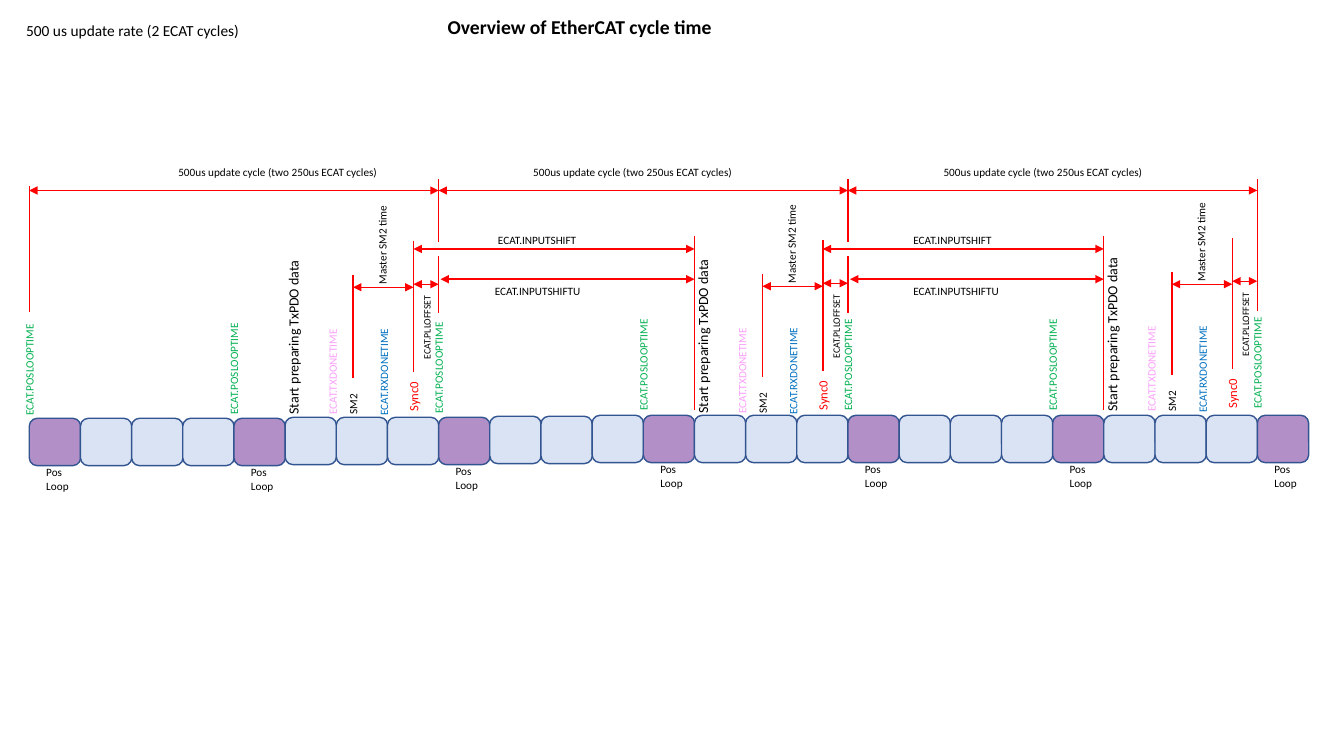
from lxml import etree
from pptx import Presentation
from pptx import util as u
from pptx.dml import color
from pptx.enum import shapes, text
from pptx.oxml import ns

# Timeline grid: 24 columns from the first position loop to the last
LEFT, PITCH = 0.29, (12.47 - 0.29) / 24
CELLS_PER_CYCLE, CELLS_PER_LOOP = 8, 4
CELL_W, CELL_H = 0.51, 0.47
CELL_TOPS = [4.15] * 5 + [4.14] * 4 + [4.13] * 2 + [4.12] * 14
LOOP_LABEL_BOTTOMS = [4.22, 4.21, 4.2, 4.17, 4.17, 4.17, 4.15]
CYCLE_RISES = [0, 0.01, 0.03]

# Columns of the events inside one cycle
SM2, SYNC, CYCLE_END = 6.33, 7.51, 8
BLACK, RED, GREEN = "000000", "FF0000", "00B050"
PINK, BLUE = "FAA0FA", "0070C0"

# Upright labels: wording, column, bottom, length, size, colour
EVENT_LABELS = [
    ("Start preparing TxPDO data", 5.16, 4.21, 1.82, 10, BLACK),
    ("ECAT.TXDONETIME", 5.93, 4.21, 1.31, 8, PINK),
    ("SM2", SM2, 4.21, 0.45, 8, BLACK),
    ("ECAT.RXDONETIME", 6.93, 4.22, 1.31, 8, BLUE),
    ("Sync0", SYNC, 4.18, 0.57, 9, RED),
    ("Master SM2 time", 6.9, 2.92, 1.05, 8, BLACK),
    ("ECAT.PLLOFFSET", 7.77, 3.66, 0.92, 7, BLACK),
]


def col(n):
    return LEFT + n * PITCH


def rgb(value):
    return color.RGBColor.from_string(value)


def label(slide, words, left, top, width, size=8, ink=BLACK, bold=False,
          height=None, turn=0):
    height = height or 0.1 + size * 0.017
    box = slide.shapes.add_textbox(u.Inches(left), u.Inches(top),
                                   u.Inches(width), u.Inches(height))
    box.rotation = turn
    frame = box.text_frame
    frame.word_wrap = True
    frame.auto_size = text.MSO_AUTO_SIZE.SHAPE_TO_FIT_TEXT
    run = frame.paragraphs[0].add_run()
    run.text = words
    run.font.name, run.font.size = "Calibri", u.Pt(size)
    run.font.bold = bold
    run.font.color.rgb = rgb(ink)


def upright_label(slide, words, x, bottom, length, size, ink):
    height = 0.1 + size * 0.017
    label(slide, words, x - length / 2, bottom - length / 2 - height / 2,
          length, size, ink, turn=270)


def line(slide, x1, y1, x2, y2, arrows=False):
    rule = slide.shapes.add_connector(
        shapes.MSO_CONNECTOR.STRAIGHT, u.Inches(x1), u.Inches(y1),
        u.Inches(x2), u.Inches(y2))
    rule.line.color.rgb = rgb(RED)
    rule.line.width = u.Pt(1)
    if arrows:
        stroke = rule.line._get_or_add_ln()
        for end in ("a:headEnd", "a:tailEnd"):
            etree.SubElement(stroke, ns.qn(end), type="triangle")
    etree.SubElement(rule._element.spPr, ns.qn("a:effectLst"))


def marker(slide, x, top, bottom):
    line(slide, x, top, x, bottom)


def span(slide, x1, x2, y):
    line(slide, x1, y, x2, y, arrows=True)


def cell(slide, n, top):
    is_loop = n % CELLS_PER_LOOP == 0
    slot = slide.shapes.add_shape(
        shapes.MSO_SHAPE.ROUNDED_RECTANGLE, u.Inches(col(n)), u.Inches(top),
        u.Inches(CELL_W), u.Inches(CELL_H))
    slot.shadow.inherit = False
    slot.fill.solid()
    slot.fill.fore_color.rgb = rgb("B28FC7" if is_loop else "DAE3F3")
    slot.line.color.rgb = rgb("325491")
    slot.line.width = u.Pt(1)
    if is_loop:
        label(slide, "Pos Loop", col(n) + 0.07, top + 0.42, 0.45, height=0.37)


def update_cycle(slide, start, rise, caption_left):
    """Events and spans of one 500 us cycle."""
    sm2, sync, end = (col(start + n) for n in (SM2, SYNC, CYCLE_END))
    for words, column, bottom, length, size, ink in EVENT_LABELS:
        upright_label(slide, words, col(start + column), bottom - rise,
                      length, size, ink)
    marker(slide, sm2, 2.73 - rise, 3.75 - rise)
    marker(slide, sync, 2.39 - rise, 3.69 - rise)
    span(slide, sm2, sync, 2.85 - rise)
    span(slide, sync, end, 2.82 - rise)
    span(slide, col(start), end, 1.89)
    label(slide, "500us update cycle (two 250us ECAT cycles)",
          caption_left, 1.59, 2.18)


def input_shift(slide, boundary, shift_left, shift_u_left):
    """Spans from a cycle boundary to the next TxPDO preparation."""
    prepare = col(boundary + 5)
    marker(slide, prepare, 2.34, 4.07)
    span(slide, col(boundary - CYCLE_END + SYNC), prepare, 2.47)
    span(slide, col(boundary) + 0.02, prepare, 2.77)
    label(slide, "ECAT.INPUTSHIFT", shift_left, 2.27, 1.01)
    label(slide, "ECAT.INPUTSHIFTU", shift_u_left, 2.77, 1.09)
    marker(slide, col(boundary), 1.78, 2.4)
    marker(slide, col(boundary), 2.54, 3.11)


def main():
    deck = Presentation()
    deck.slide_width, deck.slide_height = u.Inches(13.33), u.Inches(7.5)
    slide = deck.slides.add_slide(deck.slide_layouts[6])

    # Headings
    label(slide, "500 us update rate (2 ECAT cycles)", 0.16, 0.16, 2.43, 11)
    label(slide, "Overview of EtherCAT cycle time", 4.34, 0.1, 4.65, 14,
          bold=True)

    # Row of cells and the position loop times
    for n, top in enumerate(CELL_TOPS):
        cell(slide, n, top)
    for loop, bottom in enumerate(LOOP_LABEL_BOTTOMS):
        upright_label(slide, "ECAT.POSLOOPTIME", col(loop * CELLS_PER_LOOP),
                      bottom, 1.4, 8, GREEN)

    # Update cycles
    for cycle, (rise, caption_left) in enumerate(
            zip(CYCLE_RISES, (1.67, 5.19, 9.26))):
        update_cycle(slide, cycle * CELLS_PER_CYCLE, rise, caption_left)

    # Boundaries and input shifts
    marker(slide, col(0), 1.85, 3.1)
    input_shift(slide, 8, 4.84, 4.81)
    input_shift(slide, 16, 8.96, 8.96)
    marker(slide, col(24), 1.78, 3.09)

    deck.save("out.pptx")


if __name__ == "__main__":
    main()
